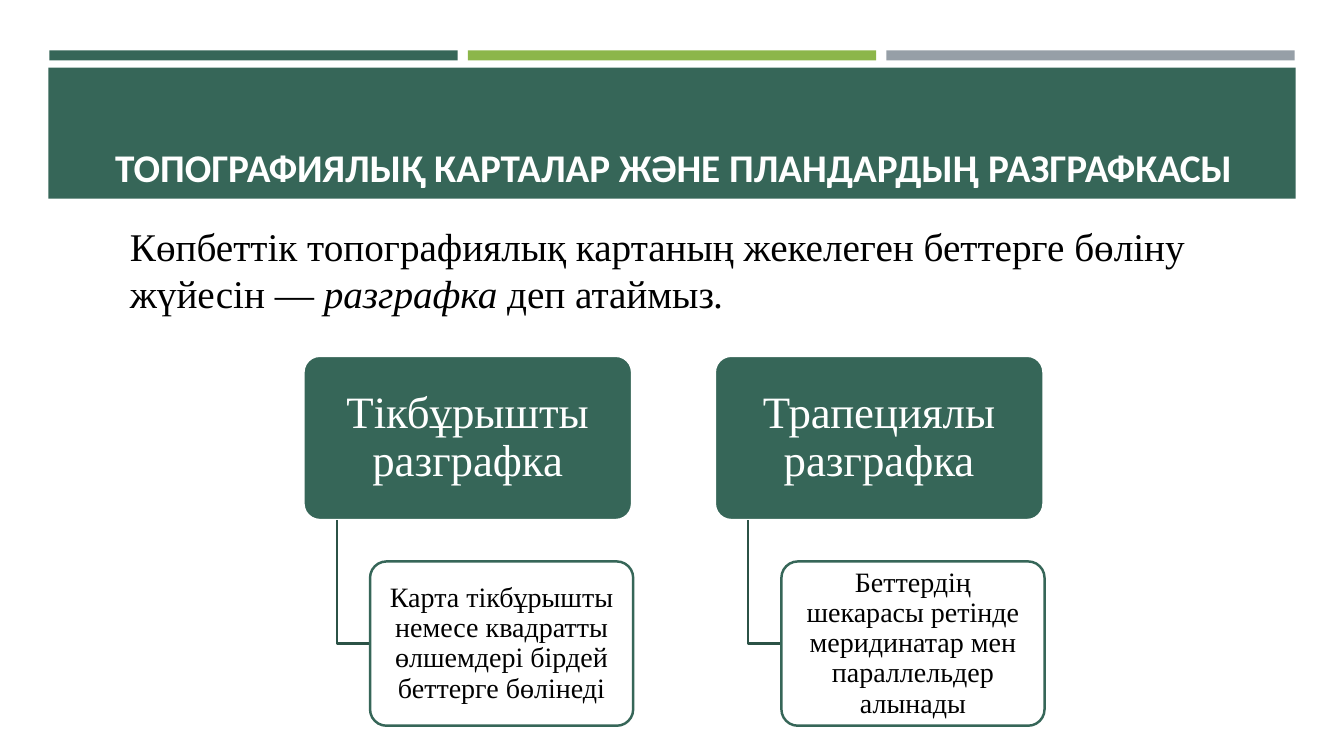
from lxml import etree
from pptx import Presentation, util as u
from pptx.dml.color import RGBColor
from pptx.enum import shapes, text
from pptx.oxml.ns import qn

W, H = 13.33, 7.5
GREEN, DARK, LIME, GREY = "366658", "2B5246", "8CB64A", "969FA7"
WHITE, BLACK = "FFFFFF", "000000"
SERIF = "Times New Roman"

prs = Presentation()
prs.slide_width, prs.slide_height = u.Inches(W), u.Inches(H)
s = prs.slides.add_slide(prs.slide_layouts[5])


def add_block(kind, x, y, w, h, fill, line=None):
    """Add a flat preset shape, outlined only when a line colour is given."""
    sp = s.shapes.add_shape(kind, *map(u.Inches, (x, y, w, h)))
    sp.shadow.inherit = False
    sp.fill.solid()
    sp.fill.fore_color.rgb = RGBColor.from_string(fill)
    if line:
        sp.line.color.rgb = RGBColor.from_string(line)
        sp.line.width = u.Pt(1.75)
    else:
        sp.line.fill.background()
    return sp


def add_run(p, words, size, color, font=SERIF, bold=False, italic=False):
    r = p.add_run()
    r.text = words
    r.font.name, r.font.size = font, u.Pt(size)
    r.font.bold, r.font.italic = bold, italic
    r.font.color.rgb = RGBColor.from_string(color)


# Header: three stripes above a band
for i, color in enumerate((GREEN, LIME, GREY)):
    add_block(shapes.MSO_SHAPE.RECTANGLE, 0.49 + i * 4.15, 0.5, 4.05, 0.1, color)
add_block(shapes.MSO_SHAPE.RECTANGLE, 0.48, 0.67, 12.37, 1.3, GREEN)

title = s.shapes.title
title.left, title.top, title.width, title.height = map(u.Inches, (0.65, 0.83, 12.06, 1.11))
s.shapes._spTree.append(title._element)  # bring in front of the band
tf = title.text_frame
tf.word_wrap = True
tf.auto_size = text.MSO_AUTO_SIZE.NONE
tf.vertical_anchor = text.MSO_ANCHOR.BOTTOM
p = tf.paragraphs[0]
p.alignment = text.PP_ALIGN.CENTER
add_run(p, "ТОПОГРАФИЯЛЫҚ КАРТАЛАР ЖӘНЕ ПЛАНДАРДЫҢ РАЗГРАФКАСЫ",
        28, WHITE, "Calibri", bold=True)

# Definition
tf = s.shapes.add_textbox(*map(u.Inches, (1.19, 2.16, 11.52, 1.04))).text_frame
tf.word_wrap = True
p = tf.paragraphs[0]
for words, italic in (
    ("Көпбеттік топографиялық картаның жекелеген беттерге бөліну жүйесін — ", False),
    ("разграфка ", True),
    ("деп атаймыз", False),
    (".", True),
):
    add_run(p, words, 28, BLACK, italic=italic)

# Two branches: a kind of division and its description
LEFT, STEP = 3.01, 4.08
ROOT_TOP, ROOT_W, BOX_H = 3.53, 3.26, 1.63
LEAF_TOP, LEAF_W, INDENT = 5.57, 2.61, 0.33
branches = (
    ("Тікбұрышты разграфка",
     "Карта тікбұрышты немесе квадратты өлшемдері бірдей беттерге бөлінеді"),
    ("Трапециялы разграфка",
     "Беттердің шекарасы ретінде меридинатар мен параллельдер алынады"),
)
for i, (kind, description) in enumerate(branches):
    x = LEFT + i * STEP
    root = add_block(shapes.MSO_SHAPE.ROUNDED_RECTANGLE, x, ROOT_TOP, ROOT_W, BOX_H, GREEN, WHITE)

    stem, bottom, middle = x + INDENT, ROOT_TOP + BOX_H, LEAF_TOP + BOX_H / 2
    elbow = s.shapes.build_freeform(u.Inches(stem), u.Inches(bottom))
    elbow.add_line_segments([(u.Inches(stem), u.Inches(middle)),
                             (u.Inches(stem + INDENT), u.Inches(middle))], close=False)
    sp = elbow.convert_to_shape()
    sp.shadow.inherit = False
    sp.fill.background()
    sp.line.color.rgb = RGBColor.from_string(DARK)
    sp.line.width = u.Pt(1.75)

    leaf = add_block(shapes.MSO_SHAPE.ROUNDED_RECTANGLE, stem + INDENT, LEAF_TOP,
                     LEAF_W, BOX_H, WHITE, GREEN)
    white = leaf.fill._xPr.find(qn("a:solidFill"))[0]
    etree.SubElement(white, qn("a:alpha")).set("val", "90000")

    for sp, words, size, color, side, edge in (
        (root, kind, 32, WHITE, 0.12, 0.09),
        (leaf, description, 20, BLACK, 0.09, 0.08),
    ):
        sp.adjustments[0] = 0.1
        tf = sp.text_frame
        tf.word_wrap = True
        tf.vertical_anchor = text.MSO_ANCHOR.MIDDLE
        tf.margin_left = tf.margin_right = u.Inches(side)
        tf.margin_top = tf.margin_bottom = u.Inches(edge)
        p = tf.paragraphs[0]
        p.alignment = text.PP_ALIGN.CENTER
        p.line_spacing = 0.9
        add_run(p, words, size, color)

prs.save("out.pptx")
